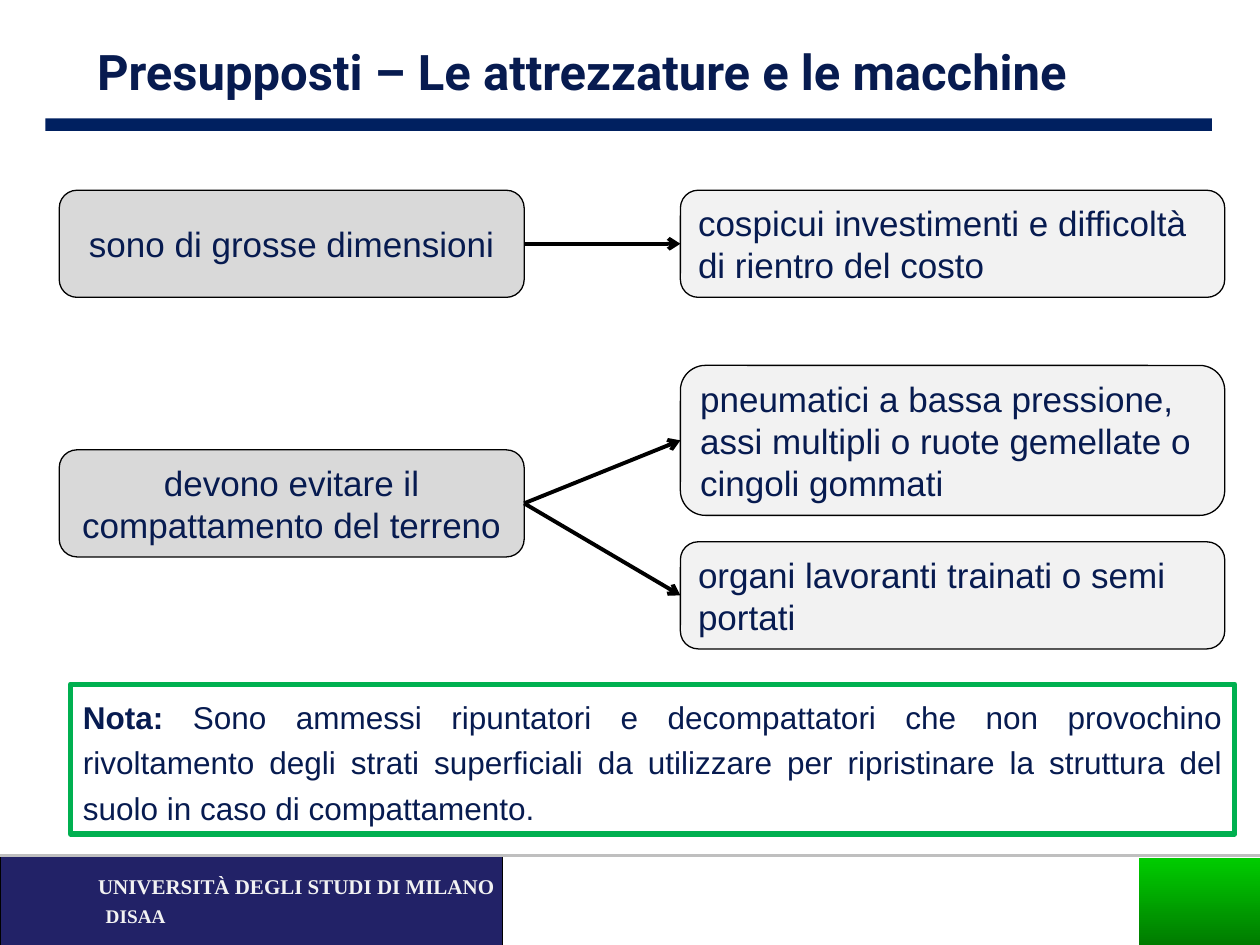
"""Build the slide on the assumptions about equipment and machines."""
from lxml.etree import SubElement
from pptx import Presentation
from pptx.dml.color import RGBColor
from pptx.enum.shapes import MSO_CONNECTOR, MSO_SHAPE
from pptx.enum.text import MSO_ANCHOR, PP_ALIGN
from pptx.oxml.ns import qn
from pptx.util import Inches, Pt

NAVY = RGBColor(0x07, 0x1B, 0x50)
BAR = RGBColor(0x00, 0x20, 0x60)
FOOTER = RGBColor(0x22, 0x22, 0x67)
BLACK = RGBColor(0x00, 0x00, 0x00)
WHITE = RGBColor(0xFF, 0xFF, 0xFF)
PALE = RGBColor(0xF2, 0xF2, 0xF2)
LIGHT = RGBColor(0xD9, 0xD9, 0xD9)
RULE = RGBColor(0xBF, 0xBF, 0xBF)
GREEN = RGBColor(0x00, 0xB0, 0x50)
DARK_GREEN = RGBColor(0x00, 0x79, 0x00)
BRIGHT_GREEN = RGBColor(0x00, 0xCC, 0x00)

COLS, ROWS = 100, 75
LEFT, RIGHT = 4.7, 54


class Deck:
    def __init__(self):
        self.prs = Presentation()
        self.prs.slide_width, self.prs.slide_height = Inches(10), Inches(7.5)
        self.slide = self.prs.slides.add_slide(self.prs.slide_layouts[5])
        self.shapes = self.slide.shapes

    def grid(self, *cells):
        units = self.prs.slide_width / COLS, self.prs.slide_height / ROWS
        return [round(cell * units[i % 2]) for i, cell in enumerate(cells)]

    def fill_text(self, sp, runs, size, font="Arial", color=NAVY, bold=None,
                  align=PP_ALIGN.LEFT, anchor=MSO_ANCHOR.TOP, spacing=None):
        tf = sp.text_frame
        tf.word_wrap, tf.vertical_anchor = True, anchor
        p = tf.paragraphs[0]
        p.alignment, p.line_spacing = align, spacing
        p.font.size, p.font.name = Pt(size), font
        p.font.color.rgb, p.font.bold = color, bold
        for text, strong in runs:
            r = p.add_run()
            r.text = text
            if strong:
                r.font.bold = True

    def title(self, cells, text):
        sp = self.shapes.title
        sp.left, sp.top, sp.width, sp.height = self.grid(*cells)
        self.fill_text(sp, [(text, False)], 28, "Roboto", bold=True,
                       anchor=MSO_ANCHOR.MIDDLE)

    def label(self, cells, text, size):
        sp = self.shapes.add_textbox(*self.grid(*cells))
        self.fill_text(sp, [(text, False)], size, "Times New Roman", PALE,
                       bold=True, spacing=1.2)

    def box(self, cells, fill, line=None, width=0.75, kind=MSO_SHAPE.RECTANGLE):
        sp = self.shapes.add_shape(kind, *self.grid(*cells))
        sp.shadow.inherit = False
        sp.fill.solid()
        sp.fill.fore_color.rgb = fill
        if line is None:
            sp.line.fill.background()
        else:
            sp.line.color.rgb, sp.line.width = line, Pt(width)
        return sp

    def gradient(self, cells, *colors):
        sp = self.box(cells, colors[0])
        sp.fill.gradient()
        sp.fill.gradient_angle = 90
        for stop, color in zip(sp.fill.gradient_stops, colors):
            stop.color.rgb = color

    def node(self, cells, text, fill, align=PP_ALIGN.LEFT):
        sp = self.box(cells, fill, BLACK, kind=MSO_SHAPE.ROUNDED_RECTANGLE)
        self.fill_text(sp, [(text, False)], 20, align=align,
                       anchor=MSO_ANCHOR.MIDDLE)
        return sp

    def cause(self, top, text):
        return self.node((LEFT, top, 36.9, 8.5), text, LIGHT, PP_ALIGN.CENTER)

    def effect(self, top, height, text):
        return self.node((RIGHT, top, 43.2, height), text, PALE)

    def line(self, cells, color):
        cxn = self.shapes.add_connector(MSO_CONNECTOR.STRAIGHT, *self.grid(*cells))
        cxn.line.color.rgb, cxn.line.width = color, Pt(2.25)
        SubElement(cxn._element.spPr, qn("a:effectLst"))
        return cxn

    def arrow(self, source, target):
        cxn = self.line((0, 0, 0, 0), BLACK)
        cxn.begin_connect(source, 3)
        cxn.end_connect(target, 1)
        ln = cxn._element.spPr.find(qn("a:ln"))
        SubElement(ln, qn("a:tailEnd"), type="arrow")


def main():
    deck = Deck()
    deck.box((0, 67.9, 39.9, 7.2), FOOTER, BLACK)
    deck.line((0, 67.9, COLS, 67.9), RULE)
    deck.label((7.4, 70.9, 9.8, 3.7), "DISAA", 11)
    deck.label((6.8, 68.4, 35.3, 3.7), "UNIVERSITÀ DEGLI STUDI DI MILANO", 12)
    deck.box((3.6, 9.4, 92.6, 1), BAR)
    deck.gradient((90.4, 68.1, 9.7, 7.1), DARK_GREEN, BRIGHT_GREEN)
    deck.title((6.7, 2.8, 87.4, 5.7), "Presupposti – Le attrezzature e le macchine")

    note = deck.box((5.6, 54.3, 92.4, 11.9), WHITE, GREEN, 3)
    deck.fill_text(note, [
        ("Nota:", True),
        (" Sono ammessi ripuntatori e decompattatori che non provochino "
         "rivoltamento degli strati superficiali da utilizzare per ripristinare "
         "la struttura del suolo in caso di compattamento.", False),
    ], 18, align=PP_ALIGN.JUSTIFY, spacing=1.2)

    size = deck.cause(15.1, "sono di grosse dimensioni")
    soil = deck.cause(35.7, "devono evitare il compattamento del terreno")
    cost = deck.effect(15.1, 8.5, "cospicui investimenti e difficoltà di rientro del costo")
    tyres = deck.effect(29, 11.9, "pneumatici a bassa pressione, assi multipli "
                                  "o ruote gemellate o cingoli gommati")
    tools = deck.effect(43, 8.5, "organi lavoranti trainati o semi portati")
    for source, target in ((size, cost), (soil, tyres), (soil, tools)):
        deck.arrow(source, target)
    deck.prs.save("out.pptx")


if __name__ == "__main__":
    main()
